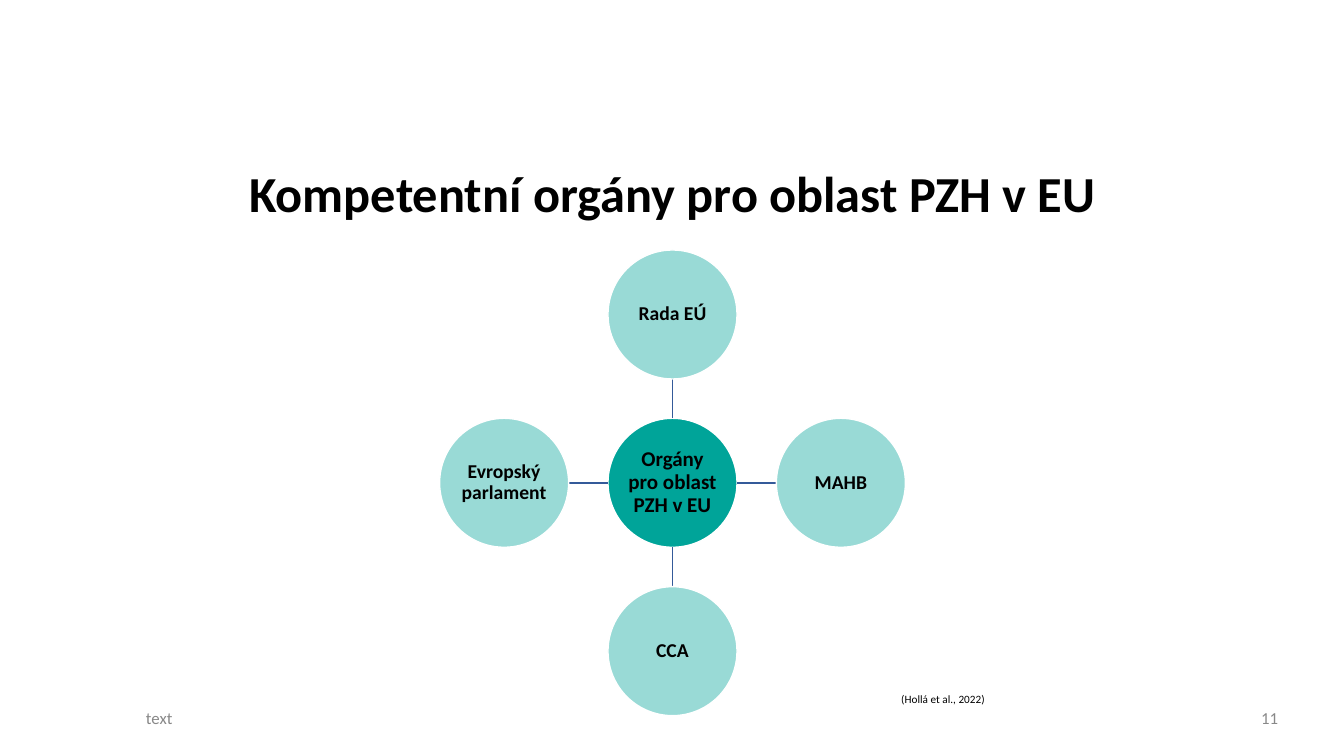
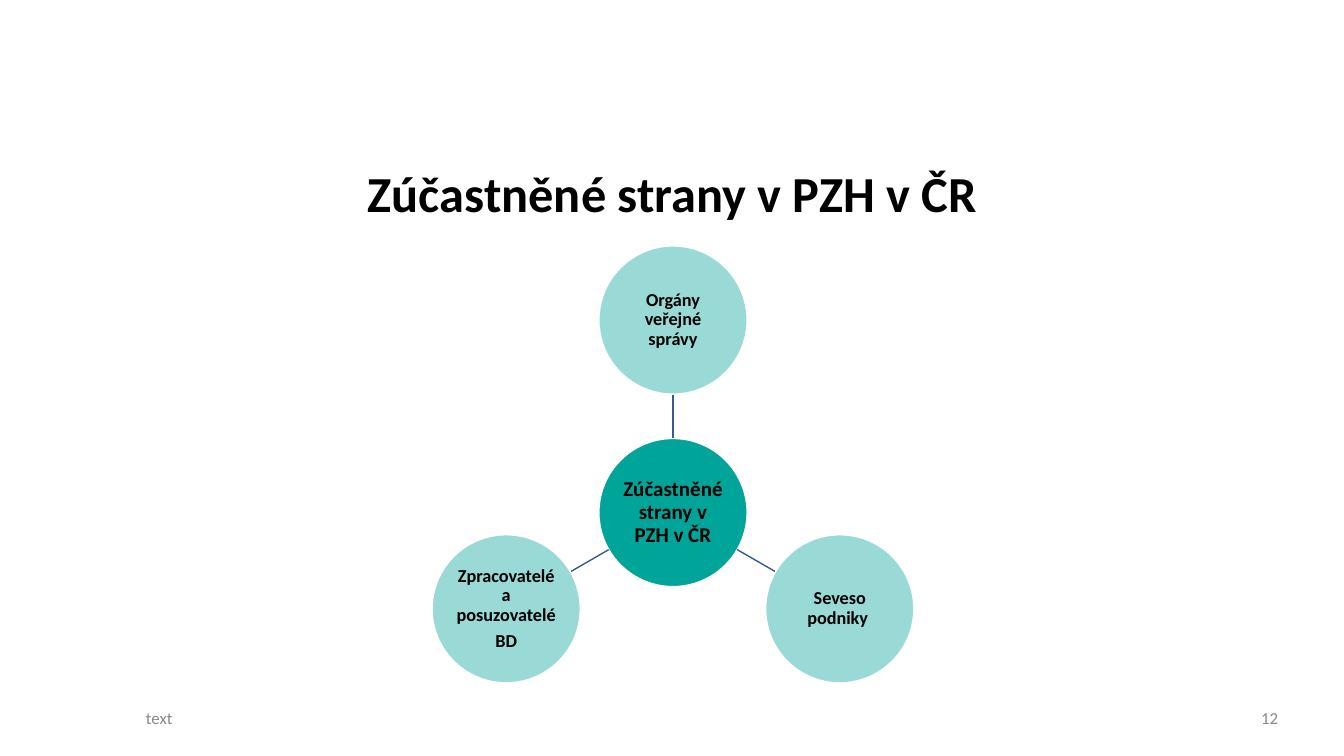
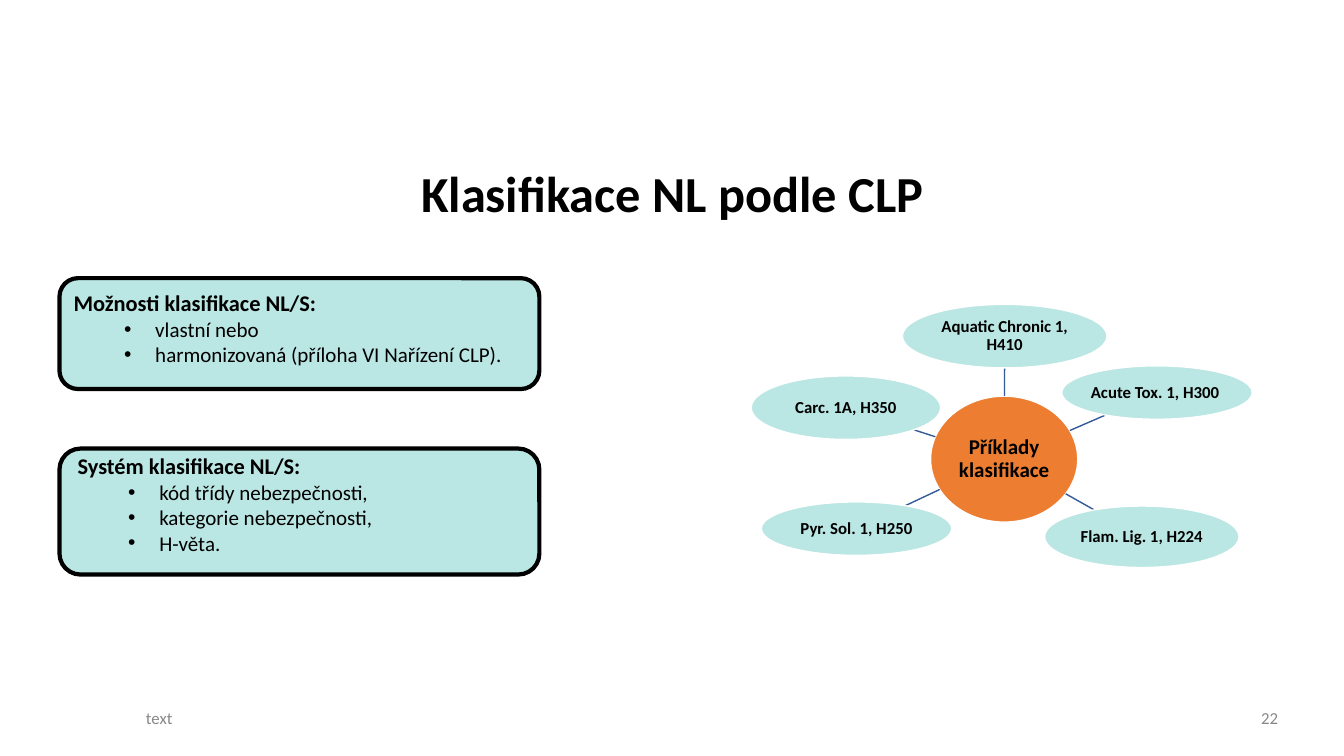
from math import cos, hypot, radians, sin

from lxml.etree import SubElement
from pptx import Presentation
from pptx.dml.color import RGBColor
from pptx.enum.shapes import MSO_CONNECTOR, MSO_SHAPE
from pptx.enum.text import MSO_ANCHOR as Anchor, MSO_AUTO_SIZE as AutoSize, PP_ALIGN as Align
from pptx.oxml.ns import qn
from pptx.util import Inches, Pt

COLORS = {
    "black": "000000",
    "white": "FFFFFF",
    "gray": "888888",
    "teal": "00A499",
    "orange": "ED7D31",
    "line": "345A99",
}
FONT = "Calibri"
TITLE_ONLY, TWO_CONTENT = 5, 3
TITLE_BOX = (0.22, 1.15, 12.9, 1.12)
FOOTER_BOX = (1.35, 6.95, 10.87, 0.34)
NUMBER_BOX = (12.41, 6.95, 0.67, 0.34)
FRAME = {"word_wrap": True, "auto_size": AutoSize.NONE}
CENTERED = {"alignment": Align.CENTER, "line_spacing": 0.9, "space_before": Pt(0)}


def apply(target, formats):
    for name, value in formats.items():
        setattr(target, name, value)


def rgb(name):
    return RGBColor.from_string(COLORS[name])


def place(shape, box):
    apply(shape, dict(zip(("left", "top", "width", "height"), map(Inches, box))))


def format_frame(frame, anchor, margins=(0.1, 0.05)):
    across, down = map(Inches, margins)
    apply(frame, {
        **FRAME, "vertical_anchor": anchor, "margin_left": across,
        "margin_right": across, "margin_top": down, "margin_bottom": down,
    })


def write(paragraph, text, size, bold=False, color="black", formats=None):
    apply(paragraph, formats or {})
    run = paragraph.add_run()
    run.text = text
    apply(run.font, {"name": FONT, "size": Pt(size), "bold": bold})
    run.font.color.rgb = rgb(color)


def add_label(slide, box, text, size, color, anchor):
    label = slide.shapes.add_textbox(*map(Inches, box))
    format_frame(label.text_frame, anchor)
    write(label.text_frame.paragraphs[0], text, size, color=color)


def start_slide(presentation, layout, title, number):
    slide = presentation.slides.add_slide(presentation.slide_layouts[layout])
    place(slide.shapes.title, TITLE_BOX)
    frame = slide.shapes.title.text_frame
    format_frame(frame, Anchor.BOTTOM)
    write(frame.paragraphs[0], title, 36, True, formats=CENTERED)
    add_label(slide, FOOTER_BOX, "text", 12, "gray", Anchor.MIDDLE)
    add_label(slide, NUMBER_BOX, str(number), 12, "gray", Anchor.MIDDLE)
    return slide


def add_filled_shape(slide, kind, box, fill, opacity, line, line_width):
    shape = slide.shapes.add_shape(kind, *map(Inches, box))
    shape.shadow.inherit = False
    shape.fill.solid()
    shape.fill.fore_color.rgb = rgb(fill)
    if opacity < 100:
        color = shape.fill._xPr.find(qn("a:solidFill"))[0]
        SubElement(color, qn("a:alpha"), val=str(opacity * 1000))
    shape.line.color.rgb = rgb(line)
    shape.line.width = Pt(line_width)
    return shape


def add_bubble(slide, box, text, size, fill="teal", opacity=100):
    bubble = add_filled_shape(slide, MSO_SHAPE.OVAL, box, fill, opacity, "white", 1)
    frame = bubble.text_frame
    format_frame(frame, Anchor.MIDDLE, (0.01, 0.01))
    for index, line in enumerate(text.split("\n")):
        paragraph = frame.add_paragraph() if index else frame.paragraphs[0]
        write(paragraph, line, size, True, formats=CENTERED)
        if index:
            paragraph.space_before = Pt(4.5)


def center_of(box):
    left, top, width, height = box
    return left + width / 2, top + height / 2


def edge_toward(box, target):
    x, y = center_of(box)
    across, down = target[0] - x, target[1] - y
    scale = 1 / hypot(across / (box[2] / 2), down / (box[3] / 2))
    return x + across * scale, y + down * scale


def add_spoke(slide, hub, satellite):
    start = edge_toward(hub, center_of(satellite))
    end = edge_toward(satellite, center_of(hub))
    spoke = slide.shapes.add_connector(MSO_CONNECTOR.STRAIGHT, *map(Inches, start + end))
    spoke.line.color.rgb = rgb("line")
    spoke.line.width = Pt(1)
    SubElement(spoke._element.spPr, qn("a:effectLst"))


def add_hub_diagram(slide, hub, hub_text, satellites, size, opacity, hub_fill="teal"):
    add_bubble(slide, hub, hub_text, 15, hub_fill)
    for text, box in satellites:
        add_spoke(slide, hub, box)
        add_bubble(slide, box, text, size, opacity=opacity)


def ring(hub, distance, labels):
    left, top, width, height = hub
    step = 360 / len(labels)
    angles = [radians(index * step - 90) for index in range(len(labels))]
    return [
        (label, (left + distance * cos(angle), top + distance * sin(angle), width, height))
        for label, angle in zip(labels, angles)
    ]


def add_bullet(paragraph):
    paragraph.level = 1
    properties = paragraph._p.get_or_add_pPr()
    properties.set("marL", str(Inches(0.81)))
    properties.set("indent", str(Inches(-0.31)))
    SubElement(SubElement(properties, qn("a:buClr")), qn("a:srgbClr"), val=COLORS["black"])
    SubElement(properties, qn("a:buFont"), typeface="Arial")
    SubElement(properties, qn("a:buChar"), char="•")


def remove_bullet(paragraph):
    properties = paragraph._p.get_or_add_pPr()
    apply_indent = {"marL": "0", "indent": "0"}
    for name, value in apply_indent.items():
        properties.set(name, value)
    SubElement(properties, qn("a:buNone"))


def add_list_panel(slide, body, panel, text_offset, heading, items):
    card = add_filled_shape(slide, MSO_SHAPE.ROUNDED_RECTANGLE, panel, "teal", 27, "black", 3)
    card.adjustments[0] = 0.167
    body._element.addprevious(card._element)
    left, top, width, height = panel
    across, down = text_offset
    place(body, (left + across, top + down, width, height - down))
    format_frame(body.text_frame, Anchor.TOP)
    first = body.text_frame.paragraphs[0]
    remove_bullet(first)
    write(first, heading, 16, True, formats={"line_spacing": 0.9, "space_before": Pt(0)})
    for item in items:
        paragraph = body.text_frame.add_paragraph()
        add_bullet(paragraph)
        write(paragraph, item, 15, formats={"line_spacing": 1.0, "space_before": Pt(0)})


def build_authorities(presentation):
    slide = start_slide(presentation, TITLE_ONLY, "Kompetentní orgány pro oblast PZH v EU", 11)
    hub = (6.03, 4.15, 1.28, 1.28)
    labels = ["Rada EÚ", "MAHB", "CCA", "Evropský parlament"]
    add_hub_diagram(slide, hub, "Orgány pro oblast PZH v EU", ring(hub, 1.67, labels), 14, 40)
    add_label(slide, (8.84, 6.82, 2.05, 0.24), "(Hollá et al., 2022)", 8, "black", Anchor.TOP)


def build_parties(presentation):
    title = "Zúčastněné strany v PZH v ČR"
    slide = start_slide(presentation, TITLE_ONLY, title, 12)
    hub = (5.94, 4.35, 1.47, 1.47)
    labels = ["Orgány veřejné správy", "Seveso podniky ", "Zpracovatelé a posuzovatelé\nBD"]
    add_hub_diagram(slide, hub, title, ring(hub, 1.91, labels), 13, 40)


def build_classification(presentation):
    slide = start_slide(presentation, TWO_CONTENT, "Klasifikace NL podle CLP", 22)
    examples = [
        ("Carc. 1A, H350", (7.45, 3.73, 1.88, 0.63)),
        ("Acute Tox. 1, H300 ", (10.53, 3.63, 1.89, 0.53)),
        ("Flam. Lig. 1, H224", (10.36, 5.02, 1.93, 0.61)),
        ("Pyr. Sol. 1, H250", (7.55, 4.98, 1.89, 0.53)),
        ("Aquatic Chronic 1, H410", (8.95, 3.02, 2.03, 0.63)),
    ]
    add_hub_diagram(
        slide, (9.23, 3.93, 1.46, 1.25), "Příklady klasifikace", examples, 12, 27, "orange"
    )
    options, system = slide.placeholders[1], slide.placeholders[2]
    add_list_panel(
        slide, options, (0.59, 2.76, 4.76, 1.1), (0.04, 0.09), "Možnosti klasifikace NL/S:",
        ["vlastní nebo", "harmonizovaná (příloha VI Nařízení CLP)."],
    )
    add_list_panel(
        slide, system, (0.59, 4.45, 4.76, 1.25), (0.08, 0.02), "Systém klasifikace NL/S:",
        ["kód třídy nebezpečnosti,", "kategorie nebezpečnosti,", "H-věta."],
    )


def main():
    presentation = Presentation()
    apply(presentation, {"slide_width": Inches(13.33), "slide_height": Inches(7.5)})
    for build in (build_authorities, build_parties, build_classification):
        build(presentation)
    presentation.save("out.pptx")


if __name__ == "__main__":
    main()
